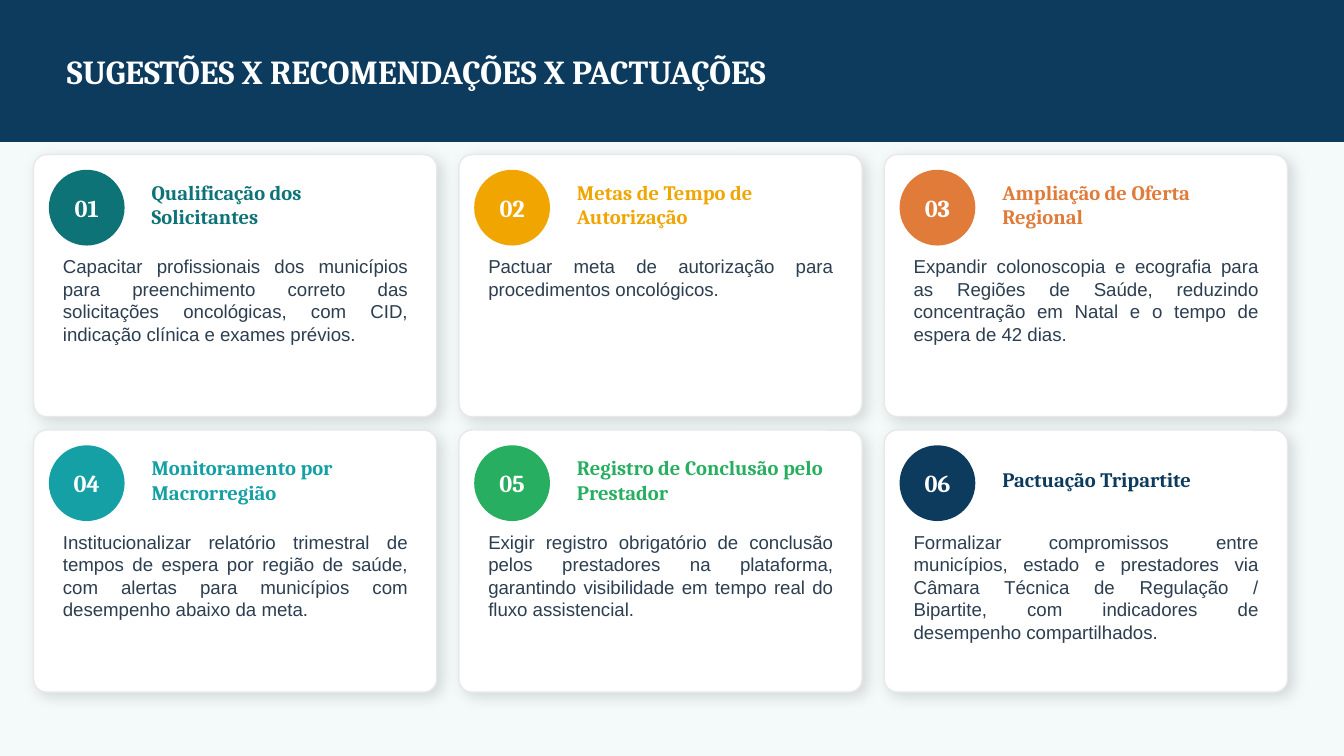
from lxml import etree
from pptx import Presentation
from pptx.dml.color import RGBColor
from pptx.enum.shapes import MSO_SHAPE
from pptx.enum.text import MSO_ANCHOR, PP_ALIGN
from pptx.oxml import parse_xml
from pptx.oxml.ns import nsdecls, qn
from pptx.util import Pt

NAVY = RGBColor(0x0D, 0x3B, 0x5E)
TEAL = RGBColor(0x0D, 0x73, 0x77)
AMBER = RGBColor(0xF0, 0xA5, 0x00)
ORANGE = RGBColor(0xE0, 0x7B, 0x39)
CYAN = RGBColor(0x14, 0xA0, 0xA5)
GREEN = RGBColor(0x27, 0xAE, 0x60)
WHITE = RGBColor(0xFF, 0xFF, 0xFF)
PALE = RGBColor(0xF4, 0xF9, 0xFA)
BORDER = RGBColor(0xE8, 0xE8, 0xE8)
INK = RGBColor(0x2C, 0x3E, 0x50)

TITLE = "SUGESTÕES X RECOMENDAÇÕES X PACTUAÇÕES"
CARDS = [
    ("Qualificação dos Solicitantes", TEAL,
     "Capacitar profissionais dos municípios para preenchimento correto das "
     "solicitações oncológicas, com CID, indicação clínica e exames prévios."),
    ("Metas de Tempo de Autorização", AMBER,
     "Pactuar meta de autorização para procedimentos oncológicos."),
    ("Ampliação de Oferta Regional", ORANGE,
     "Expandir colonoscopia e ecografia para as Regiões de Saúde, reduzindo "
     "concentração em Natal e o tempo de espera de 42 dias."),
    ("Monitoramento por Macrorregião", CYAN,
     "Institucionalizar relatório trimestral de tempos de espera por região de "
     "saúde, com alertas para municípios com desempenho abaixo da meta."),
    ("Registro de Conclusão pelo Prestador", GREEN,
     "Exigir registro obrigatório de conclusão pelos prestadores na plataforma, "
     "garantindo visibilidade em tempo real do fluxo assistencial."),
    ("Pactuação Tripartite", NAVY,
     "Formalizar compromissos entre municípios, estado e prestadores via Câmara "
     "Técnica de Regulação / Bipartite, com indicadores de desempenho "
     "compartilhados."),
]

SLIDE_W, SLIDE_H, BAR_H = 720, 405, 75.6
COLUMNS = 3
LEFT, TOP = 18, 82.8
CARD_W, CARD_H = 216, 140.4
STEP_X, STEP_Y = 227.88, 147.6
PAD, BADGE = 8.64, 39.6


def add_box(s, kind, x, y, w, h, fill, line, line_width=1):
    sp = s.shapes.add_shape(kind, Pt(x), Pt(y), Pt(w), Pt(h))
    sp.shadow.inherit = False
    sp.fill.solid()
    sp.fill.fore_color.rgb = fill
    sp.line.color.rgb = line
    sp.line.width = Pt(line_width)
    return sp


def add_text(s, text, x, y, w, h, size, color, font="Cambria", bold=True,
             align=PP_ALIGN.LEFT, anchor=MSO_ANCHOR.MIDDLE):
    tf = s.shapes.add_textbox(Pt(x), Pt(y), Pt(w), Pt(h)).text_frame
    tf.word_wrap = True
    tf.vertical_anchor = anchor
    p = tf.paragraphs[0]
    p.alignment = align
    r = p.add_run()
    r.text = text
    r.font.name = font
    r.font.size = Pt(size)
    r.font.bold = bold
    r.font.color.rgb = color


def add_soft_shadow(sp):
    effects = sp._element.spPr.find(qn("a:effectLst"))
    effects.append(parse_xml(
        f'<a:outerShdw {nsdecls("a")} blurRad="{Pt(8)}" dist="{Pt(3)}" '
        'dir="2700000" algn="bl" rotWithShape="0">'
        '<a:srgbClr val="000000"><a:alpha val="13000"/></a:srgbClr>'
        '</a:outerShdw>'))


def add_card(s, index, heading, color, body):
    row, column = divmod(index, COLUMNS)
    x, y = LEFT + column * STEP_X, TOP + row * STEP_Y
    card = add_box(s, MSO_SHAPE.ROUNDED_RECTANGLE, x, y, CARD_W, CARD_H,
                   WHITE, BORDER, 0.75)
    card.adjustments[0] = 0.05
    add_soft_shadow(card)

    x, y = x + PAD, y + PAD
    add_box(s, MSO_SHAPE.OVAL, x, y, BADGE, BADGE, color, color)
    add_text(s, f"{index + 1:02}", x, y, BADGE, BADGE, 13, WHITE,
             align=PP_ALIGN.CENTER)
    add_text(s, heading, x + 47.52, y, 151.2, 36, 11, color)
    add_text(s, body, x, y + 41.76, CARD_W - 2 * PAD, 82.8, 10, INK, "Arial",
             False, PP_ALIGN.JUSTIFY, MSO_ANCHOR.TOP)


def main():
    prs = Presentation()
    prs.slide_width, prs.slide_height = Pt(SLIDE_W), Pt(SLIDE_H)
    s = prs.slides.add_slide(prs.slide_layouts[6])
    s.background.fill.solid()
    s.background.fill.fore_color.rgb = PALE

    add_box(s, MSO_SHAPE.RECTANGLE, 0, 0, SLIDE_W, BAR_H, NAVY, NAVY)
    add_text(s, TITLE, 28.8, 0, 662.4, BAR_H, 18, WHITE)
    for index, card in enumerate(CARDS):
        add_card(s, index, *card)
    prs.save("out.pptx")


if __name__ == "__main__":
    main()
